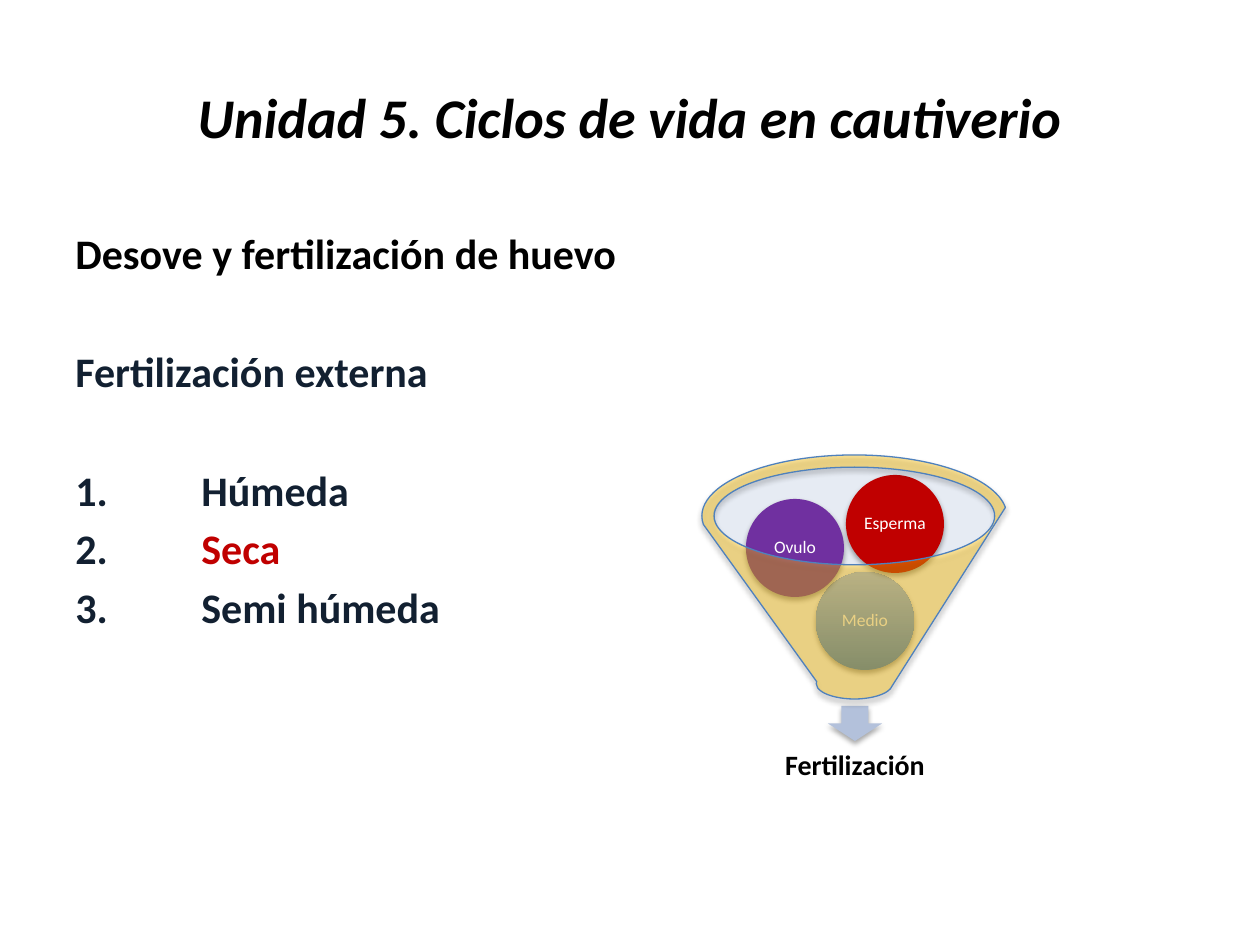
from lxml import etree
from pptx import Presentation
from pptx.dml.color import RGBColor
from pptx.enum.shapes import MSO_SHAPE
from pptx.enum.text import MSO_ANCHOR, PP_ALIGN
from pptx.oxml.ns import qn
from pptx.util import Emu, Pt

PX = 914400 // 126
OVAL, ARROW, FUNNEL = MSO_SHAPE.OVAL, MSO_SHAPE.DOWN_ARROW, MSO_SHAPE.FUNNEL
CENTER, LEFT = PP_ALIGN.CENTER, PP_ALIGN.LEFT
TOP, MIDDLE = MSO_ANCHOR.TOP, MSO_ANCHOR.MIDDLE

BLACK = RGBColor(0, 0, 0)
WHITE = RGBColor(255, 255, 255)
NAVY = RGBColor(0x12, 0x20, 0x31)
RED = RGBColor(0xC0, 0, 0)
PURPLE = RGBColor(0x70, 0x30, 0xA0)
BLUE = RGBColor(0x4F, 0x81, 0xBD)
DEEP = RGBColor(0x3F, 0x7F, 0xCE)
SKY = RGBColor(0xA4, 0xC4, 0xFF)
PALE = RGBColor(0xC2, 0xCD, 0xE1)
MIST = RGBColor(0xB3, 0xC1, 0xDB)
GOLD = RGBColor(0xFF, 0xC0, 0)

# Content
TITLE = "Unidad 5. Ciclos de vida en cautiverio"
# text, colour, space before in points, numbered
LINES = [
    ("Desove y fertilización de huevo", BLACK, 0, False),
    ("Fertilización externa", NAVY, 38.9, False),
    ("Húmeda", NAVY, 38.9, True),
    ("Seca", RED, 4.8, True),
    ("Semi húmeda", NAVY, 4.8, True),
]
# label, left, top, fill (a list is a gradient)
BALLS = [
    ("Medio", 816, 572, [DEEP, SKY]),
    ("Ovulo", 746, 499, PURPLE),
    ("Esperma", 846, 475, RED),
]
BALL = 98
RESULT = "Fertilización"

# Formats
HEAD = {"size": Pt(32), "bold": True, "italic": True}
BODY = {"size": Pt(24), "bold": True}
NOTE = {"size": Pt(16), "bold": True}
TAG = {"size": Pt(10), "bold": False}

prs = Presentation()
prs.slide_width, prs.slide_height = Emu(1260 * PX), Emu(945 * PX)
slide = prs.slides.add_slide(prs.slide_layouts[5])
shapes = slide.shapes


def box(*nums):
    return [Emu(n * PX) for n in nums]


def add(node, tag, **attrs):
    return etree.SubElement(node, qn(tag), attrs)


def write(par, text, look, color, align=CENTER):
    par.alignment = align
    run = par.add_run()
    run.text = text
    for key, val in {"name": "Calibri", **look}.items():
        setattr(run.font, key, val)
    run.font.color.rgb = color


def frame(shape, inset=None, anchor=MIDDLE):
    text = shape.text_frame
    text.word_wrap, text.vertical_anchor = True, anchor
    if inset is not None:
        for side in ("left", "right", "top", "bottom"):
            setattr(text, "margin_" + side, Emu(inset * PX))
    return text


def number(par):
    props = par._p.get_or_add_pPr()
    props.set("marL", str(126 * PX))
    props.set("indent", str(-126 * PX))
    add(add(props, "a:buClr"), "a:srgbClr", val=str(NAVY))
    add(props, "a:buFont", typeface="+mj-lt")
    add(props, "a:buAutoNum", type="arabicPeriod")


def draw(kind, spot, fill, alpha=None, line=None, shade=True):
    shape = shapes.add_shape(kind, *box(*spot))
    shape.shadow.inherit = False
    if isinstance(fill, list):
        shape.fill.gradient()
        shape.fill.gradient_angle = 90
        for stop, color in zip(shape.fill.gradient_stops, fill):
            stop.color.rgb = color
    else:
        shape.fill.solid()
        shape.fill.fore_color.rgb = fill
    props = shape._element.spPr
    if alpha:
        color = props.find(qn("a:solidFill")).find(qn("a:srgbClr"))
        add(color, "a:alpha", val=str(alpha * 1000))
    if line:
        shape.line.color.rgb, shape.line.width = line, Pt(0.75)
    else:
        shape.line.fill.background()
    if shade:
        cast = add(props.find(qn("a:effectLst")), "a:outerShdw",
                   blurRad=str(Pt(3.1)), dist=str(Pt(1.8)),
                   dir="5400000", rotWithShape="0")
        add(add(cast, "a:srgbClr", val=str(BLACK)), "a:alpha", val="35000")
    return shape


# Title
title = shapes.title
title.left, title.top, title.width, title.height = box(63, 38, 1134, 157)
write(frame(title).paragraphs[0], TITLE, HEAD, BLACK)

# Text and numbered list
body = frame(shapes.add_textbox(*box(63, 221, 1134, 624)), anchor=TOP)
for i, (text, color, gap, listed) in enumerate(LINES):
    par = body.add_paragraph() if i else body.paragraphs[0]
    par.space_before = Pt(gap)
    write(par, text, BODY, color, LEFT)
    if listed:
        number(par)

# Funnel mouth, arrow and result
draw(OVAL, (713, 467, 281, 98), PALE, alpha=40, shade=False)
draw(ARROW, (828, 706, 54, 35), MIST)
note = frame(shapes.add_textbox(*box(724, 734, 262, 65)), inset=15)
note.paragraphs[0].line_spacing = 0.9
write(note.paragraphs[0], RESULT, NOTE, BLACK)

# Balls, with the funnel over them
for label, left, top, fill in BALLS:
    ball = frame(draw(OVAL, (left, top, BALL, BALL), fill), inset=1)
    ball.paragraphs[0].line_spacing = 0.9
    write(ball.paragraphs[0], label, TAG, WHITE)
draw(FUNNEL, (702, 455, 305, 244), GOLD, alpha=40, line=BLUE)

prs.save("out.pptx")
